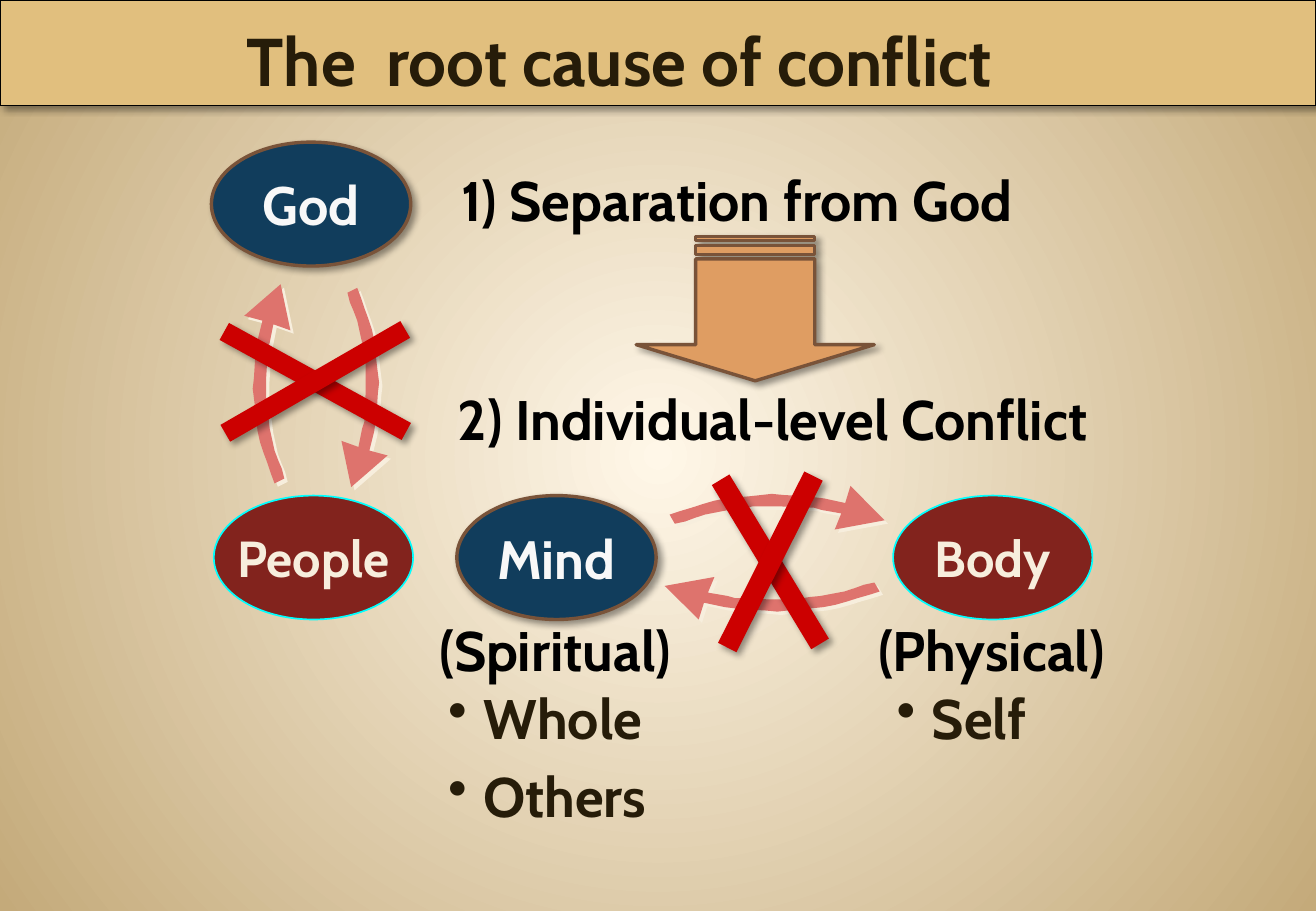
import dataclasses

import pptx
import pptx.dml.color
import pptx.enum.shapes
import pptx.enum.text
import pptx.oxml
import pptx.oxml.ns
import pptx.util

Inches = pptx.util.Inches
Pt = pptx.util.Pt
RGB = pptx.dml.color.RGBColor.from_string
SHAPE = pptx.enum.shapes.MSO_SHAPE
ALIGN = pptx.enum.text.PP_ALIGN
ANCHOR = pptx.enum.text.MSO_ANCHOR


@dataclasses.dataclass(frozen=True)
class Theme:
    font: str = "Cabin"
    glow: str = "FFF7E8"
    edge: str = "C4AA7A"
    banner: str = "E1BF7E"
    ink: str = "261C09"
    black: str = "000000"
    blue: str = "113D5C"
    on_blue: str = "F8F8F8"
    brown: str = "795339"
    maroon: str = "82231D"
    cream: str = "F7EEDD"
    cyan: str = "00FFFF"
    pink: str = "DE736D"
    red: str = "CC0000"
    orange: str = "DF9D62"
    title_size: int = 40
    body_size: int = 33
    blue_size: int = 32
    maroon_size: int = 30


THEME = Theme()

# Curved arrow pointing up, in inches from its own corner
ARROW_SIZE = (0.38, 1.65)
ARROW_OUTLINE = [
    (0.24, 0.33), (0.21, 0.48), (0.19, 0.54), (0.19, 0.62), (0.18, 0.78),
    (0.18, 0.93), (0.18, 1.01), (0.2, 1.1), (0.21, 1.19), (0.23, 1.28),
    (0.25, 1.37), (0.28, 1.45), (0.31, 1.52), (0.33, 1.6), (0.25, 1.64),
    (0.22, 1.56), (0.19, 1.47), (0.16, 1.39), (0.13, 1.3), (0.11, 1.21),
    (0.1, 1.12), (0.09, 1.02), (0.08, 0.94), (0.07, 0.86), (0.08, 0.77),
    (0.09, 0.61), (0.1, 0.53), (0.11, 0.46), (0.15, 0.3), (0, 0.26),
    (0.3, 0), (0.38, 0.38),
]
TURNS = {
    "up": lambda u, v: (u, v),
    "down": lambda u, v: (1 - u, 1 - v),
    "left": lambda u, v: (v, 1 - u),
    "right": lambda u, v: (1 - v, u),
}


def add_shadow(shape, color=THEME.black, opacity=40, blur=4, distance=3):
    shape.shadow.inherit = False
    effects = shape.element.spPr.find(pptx.oxml.ns.qn("a:effectLst"))
    effects.append(pptx.oxml.parse_xml(
        f'<a:outerShdw {pptx.oxml.ns.nsdecls("a")} blurRad="{Pt(blur)}" '
        f'dist="{Pt(distance)}" dir="2700000" algn="ctr" rotWithShape="0">'
        f'<a:srgbClr val="{color}"><a:alpha val="{opacity * 1000}"/></a:srgbClr>'
        "</a:outerShdw>"))


def paint(shape, fill, line=None, width=1):
    shape.shadow.inherit = False
    shape.fill.solid()
    shape.fill.fore_color.rgb = RGB(fill)
    if line:
        shape.line.color.rgb = RGB(line)
        shape.line.width = Pt(width)
    else:
        shape.line.fill.background()


def add_preset(slide, kind, box, fill, line=None, width=1, rotation=0):
    shape = slide.shapes.add_shape(kind, *map(Inches, box))
    paint(shape, fill, line, width)
    shape.rotation = rotation
    return shape


def write(paragraph, text, size, color, align=ALIGN.LEFT):
    paragraph.alignment = align
    run = paragraph.add_run()
    run.text = text
    run.font.name = THEME.font
    run.font.size = Pt(size)
    run.font.bold = True
    run.font.color.rgb = RGB(color)


def add_background(slide):
    fill = slide.background.fill
    fill.gradient()
    for stop, color in zip(fill.gradient_stops, (THEME.glow, THEME.edge)):
        stop.color.rgb = RGB(color)
    linear = slide.element.xpath(".//p:bgPr/a:gradFill/a:lin")[0]
    linear.getparent().replace(linear, pptx.oxml.parse_xml(
        f'<a:path {pptx.oxml.ns.nsdecls("a")} path="circle">'
        '<a:fillToRect l="50000" t="50000" r="50000" b="50000"/></a:path>'))


def add_banner(slide, text):
    banner = add_preset(slide, SHAPE.RECTANGLE, (0, 0, 10.83, 0.87),
                        THEME.banner, THEME.black, 0.75)
    add_shadow(banner)
    frame = banner.text_frame
    frame.word_wrap = True
    frame.vertical_anchor = ANCHOR.BOTTOM
    frame.margin_right = Inches(0.73)
    write(frame.paragraphs[0], text, THEME.title_size, THEME.ink, ALIGN.CENTER)


def add_party(slide, name, left, top, spiritual):
    box = (left, top, 1.64, 1.02)
    if spiritual:
        party = add_preset(slide, SHAPE.OVAL, box, THEME.blue, THEME.brown, 2)
        add_shadow(party)
        size, color = THEME.blue_size, THEME.on_blue
    else:
        party = add_preset(slide, SHAPE.OVAL, box, THEME.maroon, THEME.cyan)
        size, color = THEME.maroon_size, THEME.cream
    frame = party.text_frame
    frame.word_wrap = False
    frame.vertical_anchor = ANCHOR.MIDDLE
    write(frame.paragraphs[0], name, size, color, ALIGN.CENTER)


def add_curved_arrow(slide, direction, left, top, width, height):
    points = []
    for x, y in ARROW_OUTLINE:
        u, v = TURNS[direction](x / ARROW_SIZE[0], y / ARROW_SIZE[1])
        points.append((Inches(left + u * width), Inches(top + v * height)))
    builder = slide.shapes.build_freeform(*points[0], scale=1.0)
    builder.add_line_segments(points[1:], close=True)
    arrow = builder.convert_to_shape()
    paint(arrow, THEME.pink)
    add_shadow(arrow, THEME.cream, 100, 0, 2.8)


def add_cross(slide, box, rotations):
    for rotation in rotations:
        bar = add_preset(slide, SHAPE.RECTANGLE, box, THEME.red, rotation=rotation)
        add_shadow(bar)


def add_text(slide, box, lines, color=THEME.black, align=ALIGN.LEFT, bullets=False):
    frame = slide.shapes.add_textbox(*map(Inches, box)).text_frame
    frame.word_wrap = True
    for index, line in enumerate(lines):
        paragraph = frame.add_paragraph() if index else frame.paragraphs[0]
        write(paragraph, line, THEME.body_size, color, align)
        if bullets:
            paragraph.space_after = Pt(6.6)
            properties = paragraph._p.get_or_add_pPr()
            properties.set("marL", str(Inches(0.29)))
            properties.set("indent", str(Inches(-0.29)))
            properties.append(pptx.oxml.parse_xml(
                f'<a:buChar {pptx.oxml.ns.nsdecls("a")} char="•"/>'))


def main():
    deck = pptx.Presentation()
    deck.slide_width, deck.slide_height = Inches(10.83), Inches(7.5)
    slide = deck.slides.add_slide(deck.slide_layouts[6])
    add_background(slide)

    # Give and take between the parties
    for arrow in (("left", 5.47, 4.75, 1.78, 0.35), ("right", 5.5, 4, 1.78, 0.36),
                  ("up", 2.01, 2.34, 0.38, 1.65), ("down", 2.81, 2.36, 0.38, 1.65)):
        add_curved_arrow(slide, *arrow)

    # Parties
    for party in (("God", 1.74, 1.17, True), ("People", 1.76, 4.08, False),
                  ("Mind", 3.76, 4.08, True), ("Body", 7.35, 4.08, False)):
        add_party(slide, *party)

    # Broken relationships
    add_cross(slide, (1.74, 3.06, 1.71, 0.16), (208.8, 330))
    add_cross(slide, (5.55, 4.54, 1.58, 0.17), (238.8, 296.7))

    # Stages of conflict
    add_text(slide, (3.7, 1.32, 6.55, 0.66), ["1) Separation from God"])
    add_text(slide, (3.67, 3.12, 6.55, 0.66), ["2) Individual-level Conflict"])

    # Nature and concerns of mind and body
    for left, nature, concerns in ((3.42, "(Spiritual)", ["Whole", "Others"]),
                                   (7.01, "(Physical)", ["Self"])):
        add_text(slide, (left, 5.02, 2.3, 0.66), [nature], align=ALIGN.CENTER)
    for left, concerns in ((3.59, ["Whole", "Others"]), (7.28, ["Self"])):
        add_text(slide, (left, 5.58, 2.56, 0.66 * len(concerns)), concerns,
                 THEME.ink, bullets=True)

    # Consequence arrow and title
    consequence = add_preset(slide, SHAPE.STRIPED_RIGHT_ARROW, (5.62, 1.56, 1.19, 1.96),
                             THEME.orange, THEME.brown, 2, 90)
    consequence.adjustments[0] = 0.5
    consequence.adjustments[1] = 0.25
    add_shadow(consequence)
    add_banner(slide, "The  root cause of conflict")

    deck.save("out.pptx")


if __name__ == "__main__":
    main()
